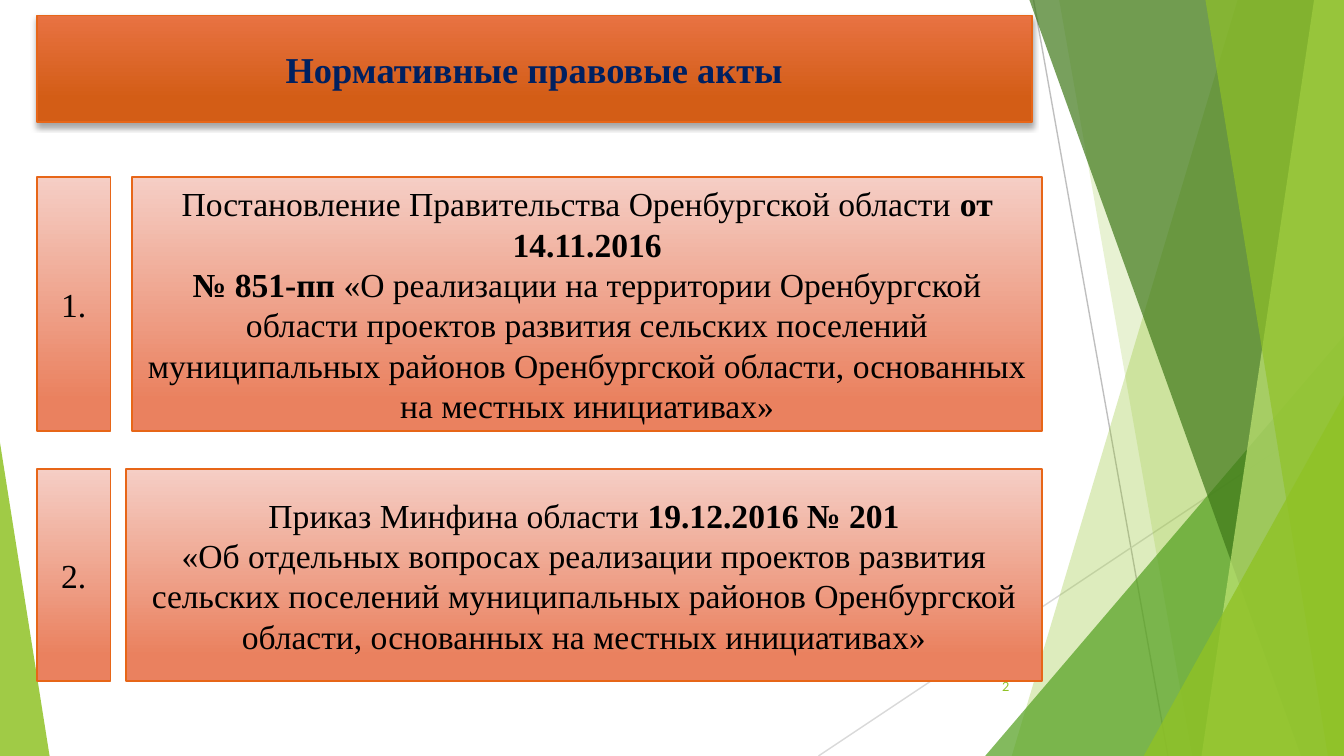
import pptx
import pptx.util
import pptx.dml.color
import pptx.enum.dml
import pptx.enum.shapes
import pptx.enum.text
import pptx.oxml
from pptx.oxml.ns import nsdecls, qn

Pt = pptx.util.Pt
SHAPE = pptx.enum.shapes.MSO_SHAPE
ALIGN = pptx.enum.text.PP_ALIGN
WIDTH, HEIGHT = 720, 405

TITLE = "Нормативные правовые акты"
PAGE = "2"
# top, height, left of the text box, paragraphs of (text, bold) runs
ACTS = [
    (95, 136, 70.7, [
        [("Постановление Правительства Оренбургской области ", False),
         ("от 14.11.2016", True)],
        [("№ 851-пп ", True),
         ("«О реализации на территории Оренбургской области проектов развития "
          "сельских поселений муниципальных районов Оренбургской области, "
          "основанных на местных инициативах»", False)]]),
    (251.2, 113.8, 67.5, [
        [("Приказ Минфина области ", False), ("19.12.2016 № 201", True)],
        [("«Об отдельных вопросах реализации проектов развития сельских "
          "поселений муниципальных районов Оренбургской области, основанных "
          "на местных инициативах»", False)]]),
]
LEFT, RIGHT, NUMBER_WIDTH = 19.8, 558.4, 39.4

RAYS = [((553.7, 0), (625.7, HEIGHT), "BFBFBF"),
        ((WIDTH, 217.4), (438.5, HEIGHT), "D9D9D9")]
# Back to front. Wedge: top x, bottom x. Triangle: left, top, width, apex.
FACETS = [
    ("wedge", (663, 542), "90C226", 30),
    ("wedge", (567.4, 638.6), "90C226", 20),
    ("triangle", (527.8, 180, 192.2, 1), "54A021", 72),
    ("wedge", (551.5, 697), "3F7819", 70),
    ("wedge", (704, 643.7), "C0E474", 70),
    ("wedge", (645.8, 711.4), "90C226", 65),
    ("triangle", (612.7, 211.7, 107.3, 1), "90C226", 80),
    ("triangle", (0, 237, 26.6, 0), "90C226", 85),
]


def rgb(value):
    return pptx.dml.color.RGBColor.from_string(value)


def add_xml(parent, xml):
    parent.append(pptx.oxml.parse_xml(xml.replace(">", f" {nsdecls('a')}>", 1)))


def fill_facet(sp, color, opacity):
    sp.shadow.inherit = False
    sp.line.fill.background()
    sp.fill.solid()
    sp.fill.fore_color.rgb = rgb(color)
    clr = sp.fill._xPr.find(qn("a:solidFill"))[0]
    add_xml(clr, f'<a:alpha val="{opacity * 1000}"></a:alpha>')


def fill_gradient(sp, start, end, end_position):
    """Vertical gradient with the orange outline shared by all boxes."""
    sp.fill.gradient()
    sp.fill.gradient_angle = 270
    stops = zip(sp.fill.gradient_stops, (start, end), (0, end_position))
    for stop, color, position in stops:
        stop.color.rgb = rgb(color)
        stop.position = position
    sp.line.color.rgb = rgb("E76618")
    sp.line.width = Pt(1)


def write(sp, paragraphs, size, color, font="Times New Roman", align=ALIGN.CENTER):
    tf = sp.text_frame
    frame = {"word_wrap": True, "auto_size": pptx.enum.text.MSO_AUTO_SIZE.NONE,
             "vertical_anchor": pptx.enum.text.MSO_ANCHOR.MIDDLE}
    for name, value in frame.items():
        setattr(tf, name, value)
    for i, runs in enumerate(paragraphs):
        p = tf.add_paragraph() if i else tf.paragraphs[0]
        p.alignment = align
        for text, bold in runs:
            r = p.add_run()
            r.text = text
            for name, value in {"name": font, "size": Pt(size), "bold": bold}.items():
                setattr(r.font, name, value)
            r.font.color.rgb = rgb(color)


def add_box(s, left, top, width, height, paragraphs):
    sp = s.shapes.add_shape(SHAPE.RECTANGLE, Pt(left), Pt(top), Pt(width), Pt(height))
    sp.shadow.inherit = False
    fill_gradient(sp, "F5CEC5", "EA815F", 0.88)
    write(sp, paragraphs, 18, "000000")


def add_background(s):
    for start, end, color in RAYS:
        line = s.shapes.add_connector(pptx.enum.shapes.MSO_CONNECTOR.STRAIGHT,
                                      *map(Pt, start + end))
        line.line.color.rgb = rgb(color)
        line.line.width = Pt(0.75)
        add_xml(line._element.spPr, "<a:effectLst></a:effectLst>")
    for kind, place, color, opacity in FACETS:
        if kind == "wedge":
            top_x, bottom_x = map(Pt, place)
            builder = s.shapes.build_freeform(top_x, 0)
            builder.add_line_segments([(Pt(WIDTH), 0), (Pt(WIDTH), Pt(HEIGHT)),
                                       (bottom_x, Pt(HEIGHT))])
            sp = builder.convert_to_shape()
        else:
            left, top, width, apex = place
            sp = s.shapes.add_shape(SHAPE.ISOSCELES_TRIANGLE, Pt(left), Pt(top),
                                    Pt(width), Pt(HEIGHT - top))
            sp.adjustments[0] = apex
        fill_facet(sp, color, opacity)


def format_title(s):
    """Turn the title placeholder into the banner, in front of the background."""
    title = s.shapes.title
    place = {"left": LEFT, "top": 8.3, "width": 533, "height": 57.2}
    for name, value in place.items():
        setattr(title, name, Pt(value))
    spPr = title._element.spPr
    add_xml(spPr, '<a:prstGeom prst="round2SameRect"><a:avLst/></a:prstGeom>')
    fill_gradient(title, "E87242", "D35D16", 0.78)
    add_xml(spPr, '<a:effectLst><a:outerShdw blurRad="38100" dist="25400" '
                  'dir="5400000" rotWithShape="0"><a:srgbClr val="000000">'
                  '<a:alpha val="35000"/></a:srgbClr></a:outerShdw></a:effectLst>')
    write(title, [[(TITLE, True)]], 19.5, "002060")
    s.shapes._spTree.append(title._element)


def main():
    prs = pptx.Presentation()
    prs.slide_width, prs.slide_height = Pt(WIDTH), Pt(HEIGHT)
    s = prs.slides.add_slide(prs.slide_layouts[5])
    add_background(s)
    page = s.shapes.add_textbox(Pt(507.6), Pt(357), Pt(40.3), Pt(21.6))
    write(page, [[(PAGE, False)]], 6.8, "90C226", "Lato", ALIGN.RIGHT)
    format_title(s)
    for number, (top, height, left, paragraphs) in enumerate(ACTS, 1):
        add_box(s, LEFT, top, NUMBER_WIDTH, height, [[(f"{number}.", False)]])
        add_box(s, left, top, RIGHT - left, height, paragraphs)
    prs.save("out.pptx")


if __name__ == "__main__":
    main()
